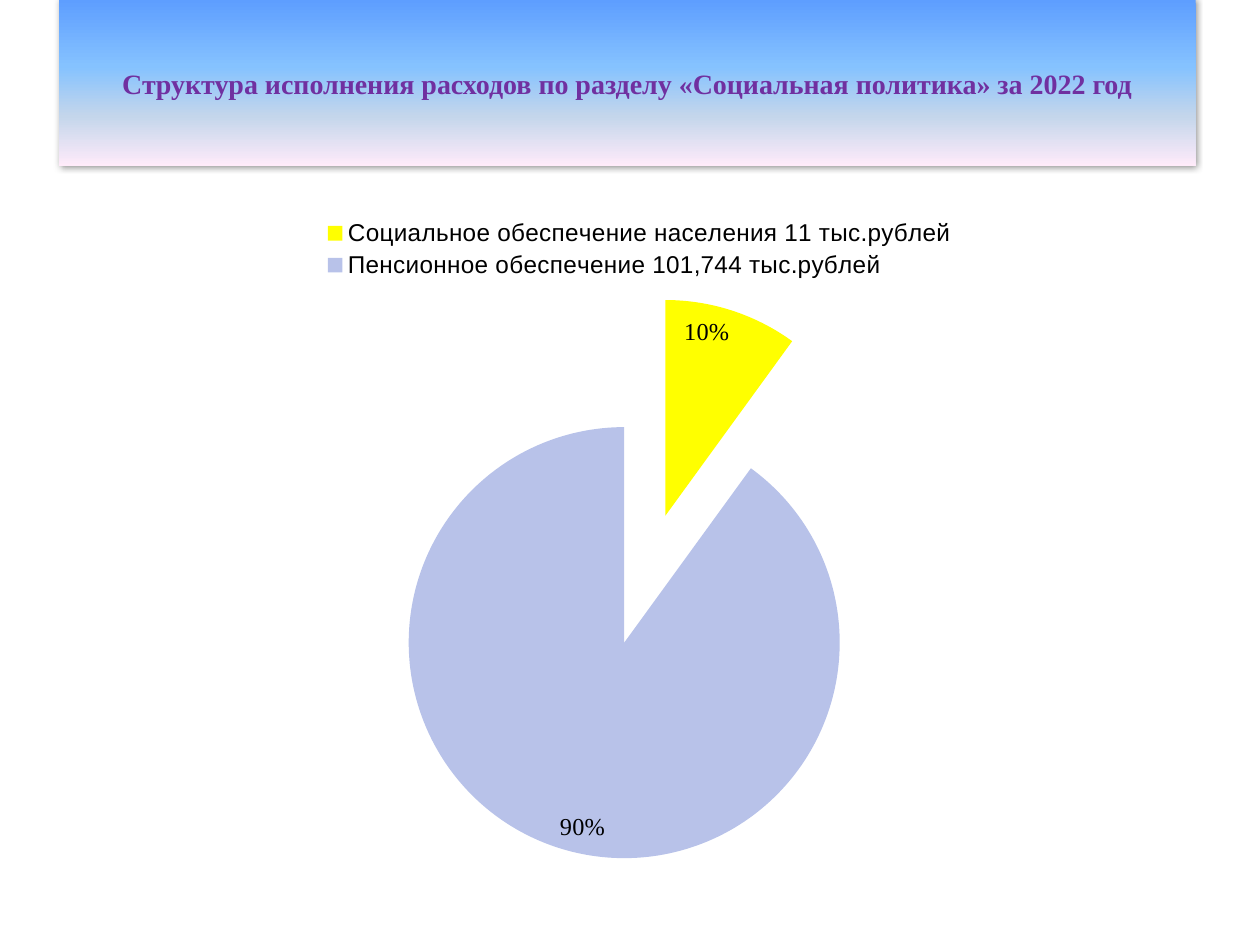
import pptx
import pptx.chart.data
import pptx.dml.color
import pptx.enum.chart
import pptx.enum.text
import pptx.oxml
import pptx.oxml.ns
import pptx.util

Pt = pptx.util.Pt
HEX = {
    "title": "7030A0", "text": "000000", "yellow": "FFFF00", "lilac": "B8C2E9",
    "sky": "5E9EFF", "light": "85C2FF", "mist": "C4D6EB", "pink": "FFEBFA",
}
STOPS = [(0, "sky"), (40, "light"), (70, "mist"), (100, "pink")]


def style(font, size, face, tint="text", bold=False):
    font.size, font.name, font.bold = Pt(size), face, bold
    font.color.rgb = pptx.dml.color.RGBColor.from_string(HEX[tint])


def write(frame, text, **form):
    para = frame.paragraphs[0]
    para.alignment = pptx.enum.text.PP_ALIGN.CENTER
    run = para.add_run()
    run.text = text
    style(run.font, **form)


def node(tag, body="", attrs=""):
    """Parse one XML element with its namespace declared."""
    space = pptx.oxml.ns.nsdecls(tag.split(":")[0])
    return pptx.oxml.parse_xml(f"<{tag} {space} {attrs}>{body}</{tag}>")


def layout(x, y, w, h, inner=False):
    """Fix a chart part at fractions of the chart's size."""
    parts = '<c:layoutTarget val="inner"/>' if inner else ""
    parts += '<c:xMode val="edge"/><c:yMode val="edge"/>'
    for key, val in zip("xywh", (x, y, w, h)):
        parts += f'<c:{key} val="{val}"/>'
    return node("c:layout", f"<c:manualLayout>{parts}</c:manualLayout>")


class Deck:
    serif = "Times New Roman"
    sans = "Arial"

    def __init__(self, wide, high):
        self.show = pptx.Presentation()
        self.show.slide_width, self.show.slide_height = Pt(wide), Pt(high)
        self.slide = self.show.slides.add_slide(self.show.slide_layouts[5])

    def title(self, text, *box):
        head = self.slide.shapes.title
        head.left, head.top, head.width, head.height = map(Pt, box)
        frame = head.text_frame
        frame.word_wrap = True
        frame.auto_size = pptx.enum.text.MSO_AUTO_SIZE.NONE
        frame.vertical_anchor = pptx.enum.text.MSO_ANCHOR.MIDDLE
        write(frame, text, size=16, face=self.serif, tint="title", bold=True)
        stops = "".join(
            f'<a:gs pos="{pos * 1000}"><a:srgbClr val="{HEX[key]}"/></a:gs>'
            for pos, key in STOPS)
        props = head._element.spPr
        props.append(node("a:prstGeom", "<a:avLst/>", 'prst="rect"'))
        props.append(node(
            "a:gradFill",
            f'<a:gsLst>{stops}</a:gsLst><a:lin ang="5400000" scaled="0"/>'))
        props.append(node(
            "a:effectLst",
            f'<a:outerShdw blurRad="{Pt(4)}" dist="0" dir="5400000">'
            '<a:srgbClr val="000000"><a:alpha val="43000"/></a:srgbClr>'
            '</a:outerShdw>'))
        self.slide.shapes._spTree.append(head._element)  # bring to front

    def pie(self, rows, burst, *box):
        data = pptx.chart.data.CategoryChartData()
        data.categories = [name for name, _, _ in rows]
        data.add_series("Series 1", [val for _, val, _ in rows])
        chart = self.slide.shapes.add_chart(
            pptx.enum.chart.XL_CHART_TYPE.PIE, *map(Pt, box), data).chart
        chart.has_title = False
        style(chart.font, 15.7, "Cabin")

        chart.has_legend = True
        key = chart.legend
        key.position = pptx.enum.chart.XL_LEGEND_POSITION.TOP
        key.include_in_layout = False
        style(key.font, 13.9, self.sans)
        for old in key._element.findall(pptx.oxml.ns.qn("c:layout")):
            key._element.remove(old)
        key._element.find(pptx.oxml.ns.qn("c:legendPos")).addnext(
            layout(0.18, 0.02, 0.64, 0.1))

        plot = chart.plots[0]
        plot.vary_by_categories = True
        area = plot._element.getparent()
        for old in area.findall(pptx.oxml.ns.qn("c:layout")):
            area.remove(old)
        area.insert(0, layout(0.22, 0.14, 0.57, 0.83, inner=True))

        series = plot.series[0]
        for i, (_, _, tint) in enumerate(rows):
            fill = series.points[i].format.fill
            fill.solid()
            fill.fore_color.rgb = pptx.dml.color.RGBColor.from_string(HEX[tint])
        first = series._element.find(pptx.oxml.ns.qn("c:dPt"))
        first.addprevious(node("c:explosion", attrs=f'val="{burst}"'))

        tags = series.data_labels
        tags.show_percentage, tags.show_value = True, False
        tags.number_format, tags.number_format_is_linked = "0%", False
        tags.position = pptx.enum.chart.XL_LABEL_POSITION.INSIDE_END
        style(tags.font, 13.9, self.serif)


def main():
    deck = Deck(720, 540)
    rows = [
        ("Социальное обеспечение населения 11 тыс.рублей", 10, "yellow"),
        ("Пенсионное обеспечение 101,744 тыс.рублей", 90, "lilac"),
    ]
    deck.pie(rows, 31, 80.6, 115.2, 570.2, 388.8)
    deck.title(
        "Структура исполнения расходов по разделу «Социальная политика» за 2022 год",
        33.8, 0, 649.4, 95)
    deck.show.save("out.pptx")


if __name__ == "__main__":
    main()
